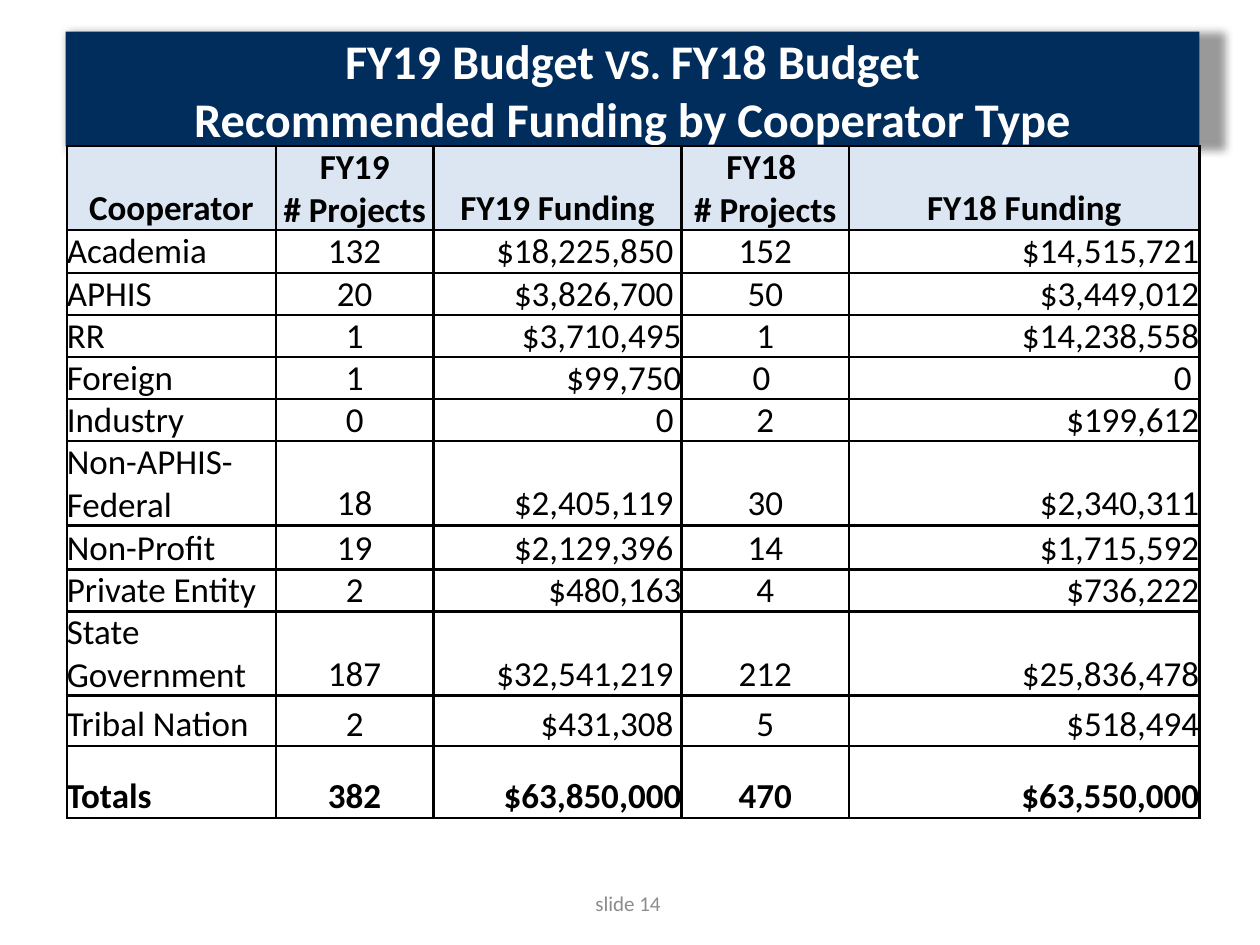
from lxml import etree
from pptx import Presentation
from pptx import util as u
from pptx.dml.color import RGBColor
from pptx.enum import text
from pptx.oxml import parse_xml
from pptx.oxml.ns import nsdecls, qn

NAVY = RGBColor(0x00, 0x2D, 0x5B)
PALE_BLUE = RGBColor(0xDC, 0xE6, 0xF2)
WHITE = RGBColor(0xFF, 0xFF, 0xFF)
BLACK = RGBColor(0, 0, 0)
GRAY = RGBColor(0x8C, 0x8C, 0x8C)

LEFT, CENTER, RIGHT = text.PP_ALIGN.LEFT, text.PP_ALIGN.CENTER, text.PP_ALIGN.RIGHT

TITLE = [
    [("FY19 Budget ", 27.6), ("VS. ", 24.2), ("FY18 Budget", 27.6)],
    [("Recommended Funding by Cooperator Type", 27.6)],
]
FUNDING = [
    ["Cooperator", "FY19\n# Projects", "FY19 Funding", "FY18 \n# Projects", "FY18 Funding"],
    ["Academia", "132", "$18,225,850 ", "152", "$14,515,721"],
    ["APHIS", "20", "$3,826,700 ", "50", "$3,449,012"],
    ["RR", "1", "$3,710,495", "1", "$14,238,558"],
    ["Foreign", "1", "$99,750", "0 ", "0 "],
    ["Industry", "0", "0 ", "2", "$199,612"],
    ["Non-APHIS-Federal", "18", "$2,405,119 ", "30", "$2,340,311"],
    ["Non-Profit", "19", "$2,129,396 ", "14", "$1,715,592"],
    ["Private Entity", "2", "$480,163", "4", "$736,222"],
    ["State Government", "187", "$32,541,219 ", "212", "$25,836,478"],
    ["Tribal Nation", "2", "$431,308 ", "5", "$518,494"],
    ["Totals", "382", "$63,850,000", "470", "$63,550,000"],
]
COLUMN_WIDTHS = [1.66, 1.25, 1.97, 1.33, 2.78]
COLUMN_ALIGNS = [LEFT, CENTER, RIGHT, CENTER, RIGHT]
ROW_HEIGHTS = [0.42, 0.34, 0.33, 0.33, 0.33, 0.25, 0.57, 0.35, 0.33, 0.57, 0.4, 0.57]


def add_span(para, words, *, size, color=BLACK, bold=False, align=CENTER, font="Calibri"):
    para.alignment = align
    span = para.add_run()
    span.text = words
    span.font.name = font
    span.font.size = u.Pt(size)
    span.font.bold = bold
    span.font.color.rgb = color


def paragraphs(frame, count):
    """Return the first paragraph of an empty frame and enough new ones."""
    return [frame.paragraphs[0]] + [frame.add_paragraph() for _ in range(count - 1)]


def add_borders(cell, color, width):
    properties = cell._tc.get_or_add_tcPr()
    for side in ("lnL", "lnR", "lnT", "lnB"):
        line = etree.SubElement(properties, qn(f"a:{side}"), w=str(u.Pt(width)))
        fill = etree.SubElement(line, qn("a:solidFill"))
        etree.SubElement(fill, qn("a:srgbClr"), val=str(color))


class BudgetSlide:
    def __init__(self, deck):
        self.page = deck.slides.add_slide(deck.slide_layouts[5])
        self.table_size = 20
        self.border_width = 1.5

    def title_bar(self, lines, left, top, width, height):
        bar = self.page.shapes.title
        bar.left, bar.top = u.Inches(left), u.Inches(top)
        bar.width, bar.height = u.Inches(width), u.Inches(height)
        bar.fill.solid()
        bar.fill.fore_color.rgb = NAVY
        bar.line.fill.background()
        bar._element.spPr.append(parse_xml(
            f'<a:effectLst {nsdecls("a")}>'
            '<a:outerShdw blurRad="63500" sx="102000" sy="102000" algn="ctr" rotWithShape="0">'
            '<a:srgbClr val="000000"><a:alpha val="40000"/></a:srgbClr>'
            '</a:outerShdw></a:effectLst>'))
        frame = bar.text_frame
        frame.auto_size = text.MSO_AUTO_SIZE.NONE
        frame.vertical_anchor = text.MSO_ANCHOR.MIDDLE
        frame.margin_top = frame.margin_bottom = 0
        for para, spans in zip(paragraphs(frame, len(lines)), lines):
            para.space_before = u.Pt(0)
            for words, size in spans:
                add_span(para, words, size=size, color=WHITE, bold=True)

    def cell(self, cell, words, *, fill, bold, align):
        cell.margin_left = cell.margin_right = cell.margin_top = cell.margin_bottom = 0
        cell.vertical_anchor = text.MSO_ANCHOR.BOTTOM
        add_borders(cell, BLACK, self.border_width)
        cell.fill.solid()
        cell.fill.fore_color.rgb = fill
        lines = words.split("\n")
        for para, line in zip(paragraphs(cell.text_frame, len(lines)), lines):
            add_span(para, line, size=self.table_size, bold=bold, align=align)

    def table(self, rows, left, top):
        table = self.page.shapes.add_table(
            len(rows), len(COLUMN_WIDTHS), u.Inches(left), u.Inches(top),
            u.Inches(sum(COLUMN_WIDTHS)), u.Inches(sum(ROW_HEIGHTS))).table
        for column, width in zip(table.columns, COLUMN_WIDTHS):
            column.width = u.Inches(width)
        for row, height in zip(table.rows, ROW_HEIGHTS):
            row.height = u.Inches(height)
        for r, row in enumerate(rows):
            header, totals = r == 0, r == len(rows) - 1
            for c, words in enumerate(row):
                self.cell(table.cell(r, c), words,
                          fill=PALE_BLUE if header else WHITE,
                          bold=header or totals,
                          align=CENTER if header else COLUMN_ALIGNS[c])

    def footer(self, words, left, top, width, height):
        box = self.page.shapes.add_textbox(
            u.Inches(left), u.Inches(top), u.Inches(width), u.Inches(height))
        frame = box.text_frame
        frame.word_wrap = True
        frame.vertical_anchor = text.MSO_ANCHOR.MIDDLE
        add_span(frame.paragraphs[0], words, size=12, color=GRAY)


def main():
    deck = Presentation()
    deck.slide_width, deck.slide_height = u.Inches(10), u.Inches(7.5)
    slide = BudgetSlide(deck)
    slide.footer("slide 14", 3.82, 6.97, 2.33, 0.4)
    slide.title_bar(TITLE, 0.52, 0.25, 9, 0.91)
    slide.table(FUNDING, 0.53, 1.16)
    deck.save("out.pptx")


if __name__ == "__main__":
    main()
